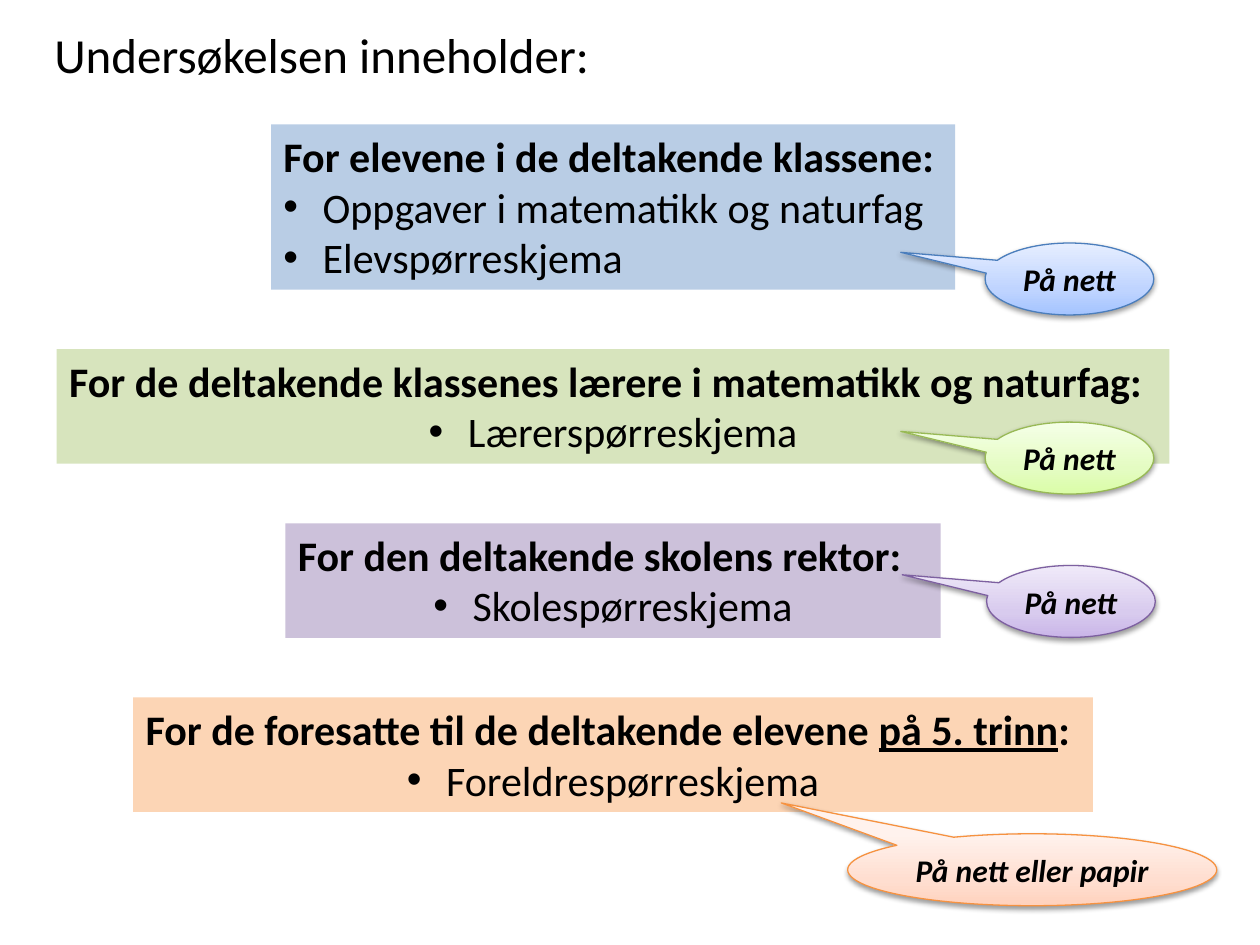
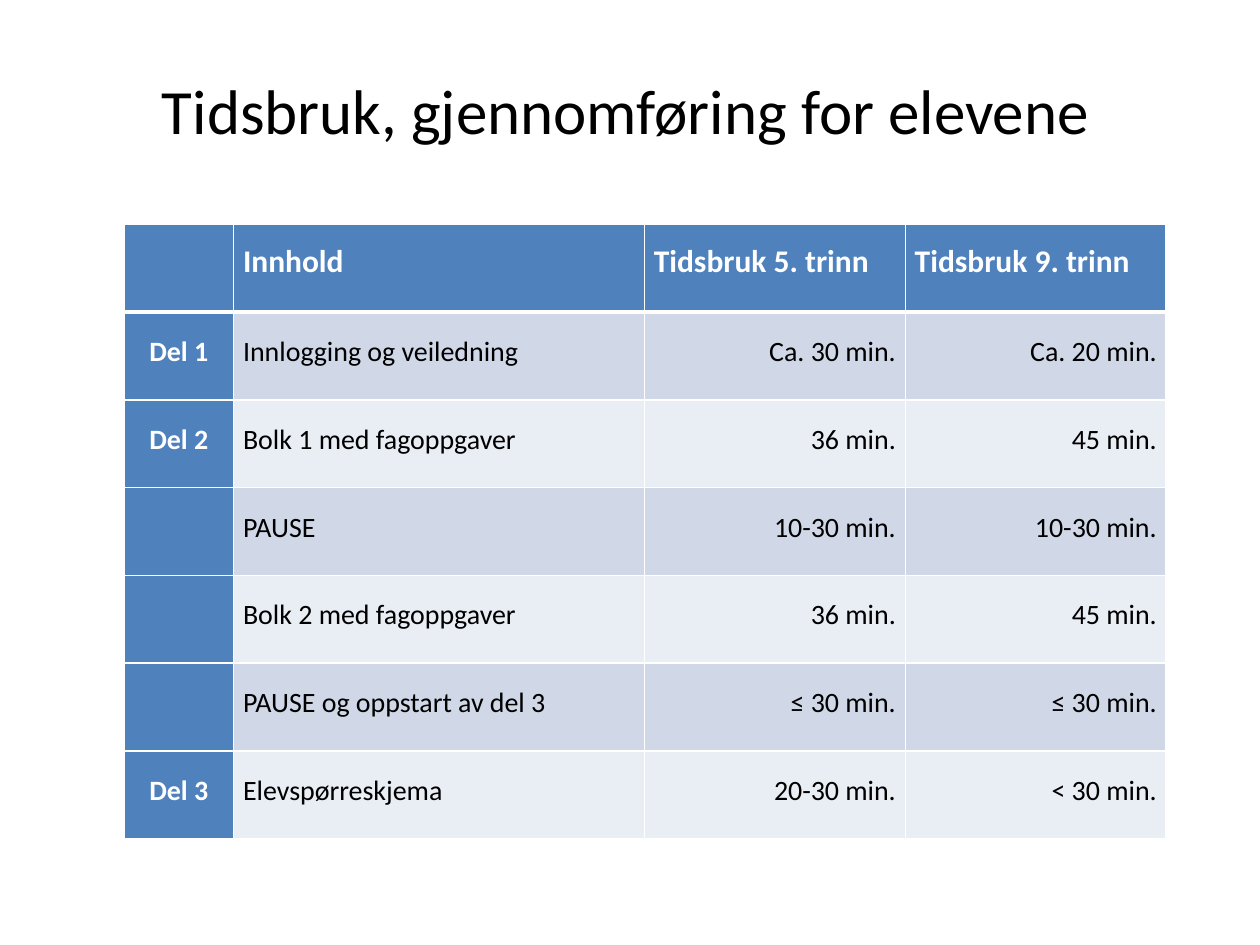
from dataclasses import dataclass
from typing import Any

import pptx
import pptx.dml.color
import pptx.enum.shapes
import pptx.enum.text
import pptx.oxml
import pptx.oxml.ns
import pptx.util
from lxml import etree

Cm = pptx.util.Cm
Pt = pptx.util.Pt
Align = pptx.enum.text.PP_ALIGN
Anchor = pptx.enum.text.MSO_ANCHOR
AutoSize = pptx.enum.text.MSO_AUTO_SIZE
Shapes = pptx.enum.shapes.MSO_SHAPE
qn = pptx.oxml.ns.qn
TITLE_ONLY = 5


@dataclass(frozen=True)
class Theme:
    font: str = "Calibri"
    black: str = "000000"
    white: str = "FFFFFF"
    header: str = "4F81BD"
    bands: tuple[str, str] = ("D0D8E8", "E9EDF4")
    topic_title: int = 28
    table_title: int = 36
    panel: int = 24
    callout: int = 18
    table_header: int = 18
    table_body: int = 16


THEME = Theme()


@dataclass(frozen=True)
class Frame:
    left: float
    top: float
    width: float
    height: float

    def lengths(self) -> list[int]:
        return [Cm(value) for value in (self.left, self.top, self.width, self.height)]


@dataclass(frozen=True)
class Span:
    text: str
    underline: bool = False


@dataclass(frozen=True)
class Panel:
    heading: tuple[Span, ...]
    items: tuple[str, ...]
    width: float
    height: float
    fill: str
    item_align: Align = Align.CENTER


@dataclass(frozen=True)
class Callout:
    text: str
    frame: Frame
    pointer: tuple[float, float]
    stops: tuple[str, str, str]
    line: str


PANEL_CENTER, PANEL_TOP, PANEL_GAP = 12.36, 2.51, 1.2
PANELS = [
    Panel((Span("For elevene i de deltakende klassene:"),),
          ("Oppgaver i matematikk og naturfag", "Elevspørreskjema"),
          13.79, 3.33, "B9CDE5", Align.LEFT),
    Panel((Span("For de deltakende klassenes lærere i matematikk og naturfag:"),),
          ("Lærerspørreskjema",), 22.43, 2.31, "D7E4BD"),
    Panel((Span("For den deltakende skolens rektor:"),),
          ("Skolespørreskjema",), 13.21, 2.31, "CCC1DA"),
    Panel((Span("For de foresatte til de deltakende elevene "),
           Span("på 5. trinn", True), Span(":")),
          ("Foreldrespørreskjema",), 19.35, 2.31, "FCD5B5"),
]

SIDE_POINTER = (-1.0, -0.37)
CALLOUTS = [
    Callout("På nett", Frame(19.86, 4.9, 3.4, 1.45), SIDE_POINTER,
            ("A4C4FF", "BFD4FF", "E6EEFF"), "4B7EBC"),
    Callout("På nett", Frame(19.86, 8.51, 3.4, 1.45), SIDE_POINTER,
            ("DAFDA7", "E4FCC2", "F5FFE7"), "98B955"),
    Callout("På nett", Frame(19.89, 11.4, 3.4, 1.45), SIDE_POINTER,
            ("C9B5E8", "D8CBEE", "F0EAF9"), "7D60A0"),
    Callout("På nett eller papir", Frame(17.09, 16.81, 7.44, 1.45), (-0.68, -0.93),
            ("FFD2BD", "FFDED0", "FFF2ED"), "F69240"),
]

TABLE_FRAME = Frame(2.5, 4.52, 21.01, 12.39)
COLUMN_WIDTHS = (2.21, 8.28, 5.26, 5.26)
ROWS = [
    ("", "Innhold", "Tidsbruk 5. trinn", "Tidsbruk 9. trinn"),
    ("Del 1", "Innlogging og veiledning", "Ca. 30 min.", "Ca. 20 min."),
    ("Del 2", "Bolk 1 med fagoppgaver", "36 min.", "45 min."),
    ("", "PAUSE", "10-30 min.", "10-30 min."),
    ("", "Bolk 2 med fagoppgaver", "36 min.", "45 min."),
    ("", "PAUSE og oppstart av del 3", "≤ 30 min.", "≤ 30 min."),
    ("Del 3", "Elevspørreskjema", "20-30 min.", "< 30 min."),
]
BODY_ALIGNS = (Align.CENTER, Align.LEFT, Align.RIGHT, Align.RIGHT)


def rgb(value: str) -> pptx.dml.color.RGBColor:
    return pptx.dml.color.RGBColor.from_string(value)


def apply(target: Any, values: dict[str, Any]) -> None:
    for name, value in values.items():
        setattr(target, name, value)


def add_xml(parent: Any, tag: str, **attributes: Any) -> Any:
    return etree.SubElement(parent, qn(tag), {name: str(value) for name, value in attributes.items()})


def add_span(para: Any, text: str, size: int, color: str = THEME.black, **values: Any) -> None:
    span = para.add_run()
    span.text = text
    apply(span.font, {"name": THEME.font, "size": Pt(size), **values})
    span.font.color.rgb = rgb(color)


def set_title(page: Any, text: str, frame: Frame, size: int, align: Align, anchor: Anchor) -> None:
    title = page.shapes.title
    apply(title, dict(zip(("left", "top", "width", "height"), frame.lengths())))
    apply(title.text_frame, {"auto_size": AutoSize.NONE, "vertical_anchor": anchor})
    para = title.text_frame.paragraphs[0]
    para.alignment = align
    add_span(para, text, size)


def set_bullet(para: Any) -> None:
    properties = para._p.get_or_add_pPr()
    indent = Cm(0.79)
    properties.set("marL", str(indent))
    properties.set("indent", str(-indent))
    add_xml(properties, "a:buFont", typeface="Arial")
    add_xml(properties, "a:buChar", char="•")


def draw_panel(page: Any, panel: Panel, top: float) -> None:
    frame = Frame(PANEL_CENTER - panel.width / 2, top, panel.width, panel.height)
    box = page.shapes.add_shape(Shapes.RECTANGLE, *frame.lengths())
    box.shadow.inherit = False
    box.fill.solid()
    box.fill.fore_color.rgb = rgb(panel.fill)
    box.line.fill.background()
    apply(box.text_frame, {"word_wrap": True, "vertical_anchor": Anchor.TOP})
    heading = box.text_frame.paragraphs[0]
    heading.alignment = Align.LEFT
    for span in panel.heading:
        add_span(heading, span.text, THEME.panel, bold=True, underline=span.underline)
    for item in panel.items:
        para = box.text_frame.add_paragraph()
        para.alignment = panel.item_align
        set_bullet(para)
        add_span(para, item, THEME.panel)


def set_gradient(box: Any, stops: tuple[str, str, str]) -> None:
    gradient = pptx.oxml.parse_xml(f"<a:gradFill {pptx.oxml.ns.nsdecls('a')}/>")
    stop_list = add_xml(gradient, "a:gsLst")
    for percent, color in zip((0, 35, 100), stops):
        stop = add_xml(stop_list, "a:gs", pos=percent * 1000)
        add_xml(stop, "a:srgbClr", val=color)
    add_xml(gradient, "a:lin", ang=270 * 60000, scaled=1)
    box._element.spPr.find(qn("a:prstGeom")).addnext(gradient)


def set_shadow(box: Any) -> None:
    box.shadow.inherit = False
    effects = box._element.spPr.find(qn("a:effectLst"))
    shadow = add_xml(effects, "a:outerShdw", blurRad=Pt(3.1), dist=Pt(1.6),
                     dir=90 * 60000, rotWithShape=0)
    color = add_xml(shadow, "a:srgbClr", val=THEME.black)
    add_xml(color, "a:alpha", val=38000)


def draw_callout(page: Any, callout: Callout) -> None:
    box = page.shapes.add_shape(Shapes.OVAL_CALLOUT, *callout.frame.lengths())
    for index, offset in enumerate(callout.pointer):
        box.adjustments[index] = offset
    set_gradient(box, callout.stops)
    box.line.color.rgb = rgb(callout.line)
    box.line.width = Pt(0.75)
    set_shadow(box)
    apply(box.text_frame, {"word_wrap": False, "vertical_anchor": Anchor.MIDDLE})
    para = box.text_frame.paragraphs[0]
    para.alignment = Align.CENTER
    add_span(para, callout.text, THEME.callout, bold=True, italic=True)


def set_borders(cell: Any, bottom: float, top: float) -> None:
    properties = cell._tc.get_or_add_tcPr()
    widths = {"a:lnL": 1, "a:lnR": 1, "a:lnT": top, "a:lnB": bottom}
    for index, (tag, width) in enumerate(widths.items()):
        line = add_xml(properties, tag, w=Pt(width))
        add_xml(add_xml(line, "a:solidFill"), "a:srgbClr", val=THEME.white)
        properties.insert(index, line)


def draw_cell(cell: Any, text: str, row: int, column: int) -> None:
    is_header = row == 0
    is_label = is_header or column == 0
    cell.fill.solid()
    cell.fill.fore_color.rgb = rgb(THEME.header if is_label else THEME.bands[(row - 1) % 2])
    set_borders(cell, bottom=3 if is_header else 1, top=3 if row == 1 else 1)
    if not text:
        return
    apply(cell, {"vertical_anchor": Anchor.MIDDLE, "margin_left": Cm(0.19),
                 "margin_right": Cm(0.19), "margin_top": 0, "margin_bottom": 0})
    para = cell.text_frame.paragraphs[0]
    apply(para, {"alignment": Align.LEFT if is_header else BODY_ALIGNS[column],
                 "line_spacing": Pt(15), "space_before": Pt(6), "space_after": Pt(6)})
    add_span(para, text, THEME.table_header if is_header else THEME.table_body,
             THEME.white if is_label else THEME.black, bold=is_label)


def draw_time_table(page: Any) -> None:
    table = page.shapes.add_table(len(ROWS), len(COLUMN_WIDTHS), *TABLE_FRAME.lengths()).table
    for column, width in zip(table.columns, COLUMN_WIDTHS):
        column.width = Cm(width)
    for row, texts in enumerate(ROWS):
        for column, text in enumerate(texts):
            draw_cell(table.cell(row, column), text, row, column)


def build_contents(page: Any) -> None:
    set_title(page, "Undersøkelsen inneholder:", Frame(0.84, 0.36, 23.06, 2.97),
              THEME.topic_title, Align.LEFT, Anchor.TOP)
    top = PANEL_TOP
    for panel in PANELS:
        draw_panel(page, panel, top)
        top += panel.height + PANEL_GAP
    for callout in CALLOUTS:
        draw_callout(page, callout)


def build_time_use(page: Any) -> None:
    set_title(page, "Tidsbruk, gjennomføring for elevene", Frame(1.3, 1.32, 22.63, 1.75),
              THEME.table_title, Align.CENTER, Anchor.MIDDLE)
    draw_time_table(page)


def main() -> None:
    deck = pptx.Presentation()
    apply(deck, {"slide_width": Cm(25.4), "slide_height": Cm(19.05)})
    for build in (build_contents, build_time_use):
        build(deck.slides.add_slide(deck.slide_layouts[TITLE_ONLY]))
    deck.save("out.pptx")


if __name__ == "__main__":
    main()
